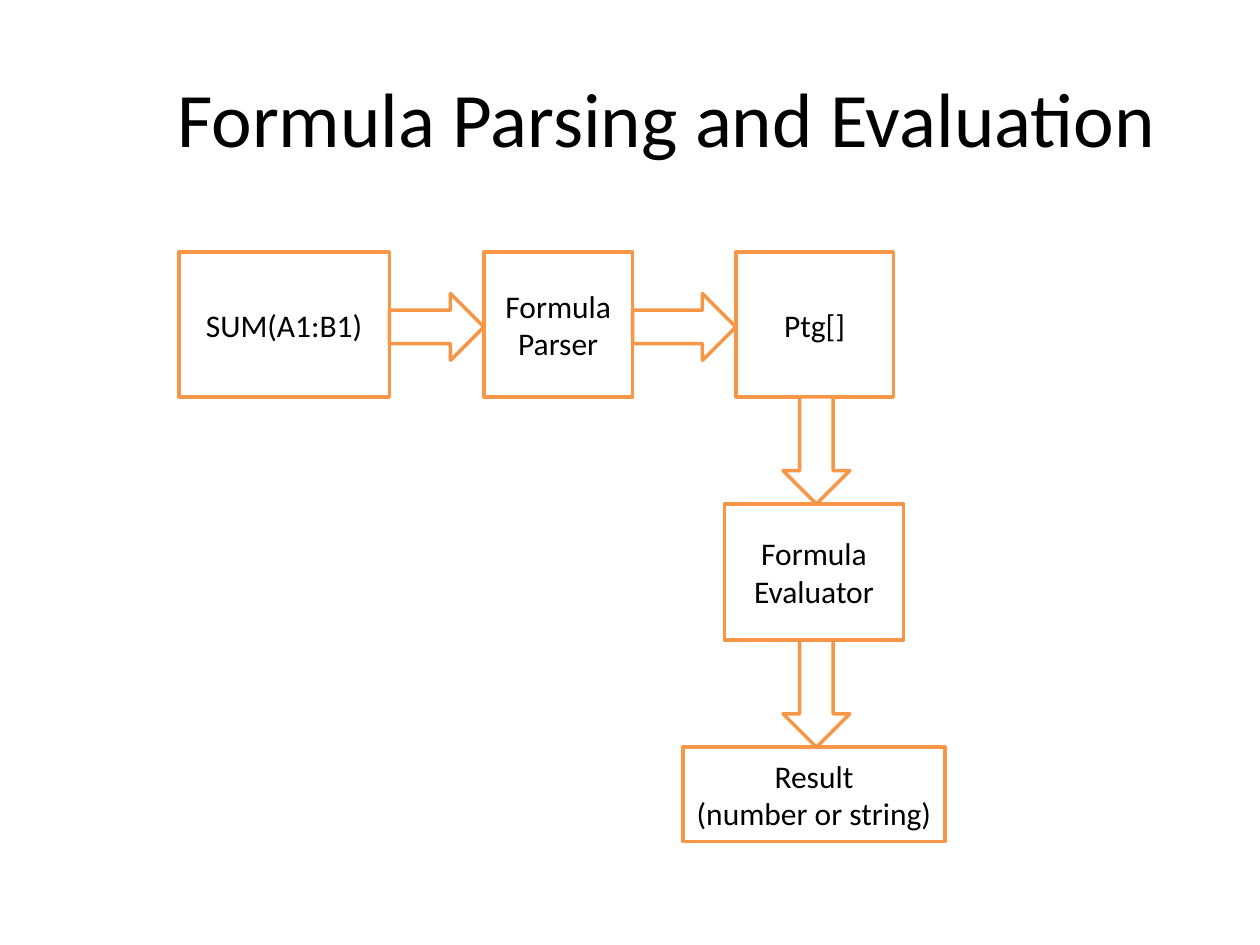
from pptx import Presentation
from pptx.dml.color import RGBColor
from pptx.enum.shapes import MSO_SHAPE
from pptx.enum.text import MSO_ANCHOR, PP_ALIGN
from pptx.util import Inches, Pt

RECTANGLE = MSO_SHAPE.RECTANGLE
RIGHT_ARROW = MSO_SHAPE.RIGHT_ARROW
DOWN_ARROW = MSO_SHAPE.DOWN_ARROW
MIDDLE = MSO_ANCHOR.MIDDLE
CENTER = PP_ALIGN.CENTER

COLORS = {"fill": "FFFFFF", "outline": "F79646", "text": "000000"}
FONT = "Calibri"
ARROW_BREADTH = 0.53


def rgb(name):
    """Return the named palette colour."""
    return RGBColor.from_string(COLORS[name])


def write_lines(frame, lines, size):
    """Write centred lines into a text frame, one paragraph each."""
    frame.word_wrap = True
    frame.vertical_anchor = MIDDLE
    for index, line in enumerate(lines):
        paragraph = frame.add_paragraph() if index else frame.paragraphs[0]
        paragraph.alignment = CENTER
        run = paragraph.add_run()
        run.text = line
        run.font.name = FONT
        run.font.size = Pt(size)
        run.font.color.rgb = rgb("text")


def add_outlined(slide, kind, left, top, width, height):
    """Add a white shape with an orange outline."""
    shape = slide.shapes.add_shape(
        kind, Inches(left), Inches(top), Inches(width), Inches(height))
    shape.shadow.inherit = False
    shape.fill.solid()
    shape.fill.fore_color.rgb = rgb("fill")
    shape.line.color.rgb = rgb("outline")
    shape.line.width = Pt(2)
    return shape


def add_step(slide, lines, left, top, width, height):
    """Add a labelled box of the flow."""
    step = add_outlined(slide, RECTANGLE, left, top, width, height)
    write_lines(step.text_frame, lines, 18)


def add_title(slide, left, top, width, height):
    """Add the slide title."""
    title = slide.shapes.add_textbox(
        Inches(left), Inches(top), Inches(width), Inches(height))
    write_lines(title.text_frame, ["Formula Parsing and Evaluation"], 44)


def add_parsing_row(slide, left, top, height):
    """Add the parsing steps from left to right, joined by arrows."""
    steps = [("SUM(A1:B1)", 1.67, 0.75), ("Formula Parser", 1.18, 0.82),
             ("Ptg[]", 1.25, 0)]
    arrow_top = top + (height - ARROW_BREADTH) / 2 + 0.02
    for label, width, gap in steps:
        add_step(slide, [label], left, top, width, height)
        left += width
        if gap:
            add_outlined(slide, RIGHT_ARROW, left, arrow_top, gap, ARROW_BREADTH)
        left += gap


def add_evaluation_column(slide, center, top):
    """Add the evaluation steps from top to bottom, each below its arrow."""
    steps = [(["Formula Evaluator"], 1.42, 1.08),
             (["Result", "(number or string)"], 2.08, 0.75)]
    arrow_length = 0.85
    arrow_left = center - ARROW_BREADTH / 2 + 0.02
    for lines, width, height in steps:
        add_outlined(slide, DOWN_ARROW, arrow_left, top,
                     ARROW_BREADTH, arrow_length)
        top += arrow_length
        add_step(slide, lines, center - width / 2, top, width, height)
        top += height


def main():
    """Build the slide and save it."""
    deck = Presentation()
    deck.slide_width, deck.slide_height = Inches(10), Inches(7.5)
    slide = deck.slides.add_slide(deck.slide_layouts[6])
    add_title(slide, 1.08, 0.3, 8.42, 1.25)
    add_parsing_row(slide, 1.42, 2, 1.15)
    add_evaluation_column(slide, 6.46, 3.15)
    deck.save("out.pptx")


if __name__ == "__main__":
    main()
